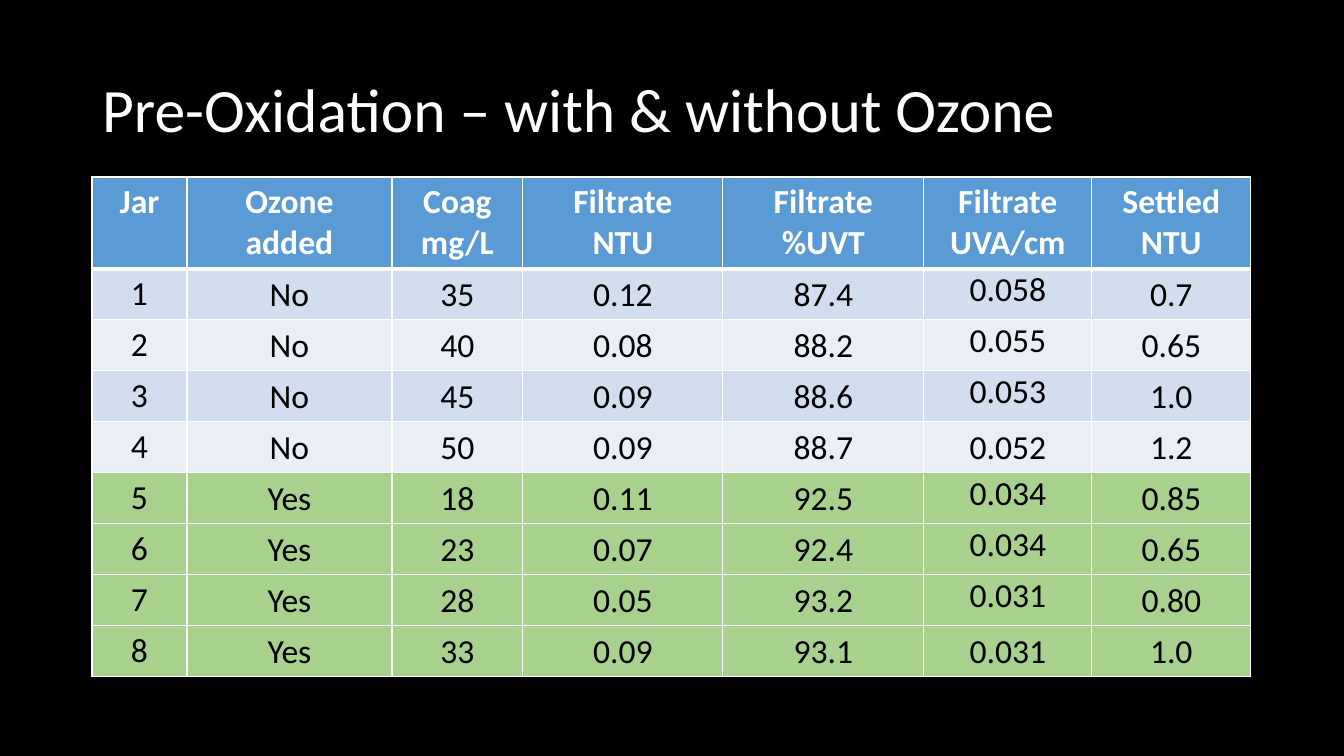
from dataclasses import dataclass

from lxml.etree import SubElement
from pptx import Presentation
from pptx.dml.color import RGBColor
from pptx.enum.text import MSO_ANCHOR, MSO_AUTO_SIZE, PP_ALIGN
from pptx.oxml.ns import qn
from pptx.util import Pt

EMU_PER_PX = 914400 / 100.8
TITLE_ONLY = 5


@dataclass(frozen=True)
class Theme:
    font: str = "Calibri"
    title_size: int = 44
    table_size: int = 24
    background: str = "000000"
    light: str = "FFFFFF"
    dark: str = "000000"
    header: str = "5B9BD5"
    bands: tuple = ("D2DEEF", "EAEFF7")
    ozone: str = "A9D18E"
    thin_line: int = 1
    header_line: int = 3


THEME = Theme()

HEADINGS = ("Jar", "Ozone\nadded", "Coag\nmg/L", "Filtrate\nNTU",
            "Filtrate\n%UVT", "Filtrate\nUVA/cm", "Settled\nNTU")
JARS = (
    ("1", "No", "35", "0.12", "87.4", "0.058", "0.7"),
    ("2", "No", "40", "0.08", "88.2", "0.055", "0.65"),
    ("3", "No", "45", "0.09", "88.6", "0.053", "1.0"),
    ("4", "No", "50", "0.09", "88.7", "0.052", "1.2"),
    ("5", "Yes", "18", "0.11", "92.5", "0.034", "0.85"),
    ("6", "Yes", "23", "0.07", "92.4", "0.034", "0.65"),
    ("7", "Yes", "28", "0.05", "93.2", "0.031", "0.80"),
    ("8", "Yes", "33", "0.09", "93.1", "0.031", "1.0"),
)
JARS_PER_GROUP = 4
JAR_COLUMN, UVA_COLUMN = 0, 5
COLUMN_WIDTHS = (95, 205, 131, 200, 201, 168, 159)
HEADER_HEIGHT, JAR_HEIGHT, TABLE_HEIGHT = 71, 42, 489
WIDE_MARGINS = (9, 5, 9, 5)
TIGHT_MARGINS = (1, 1, 1, 0)


def px(length):
    return round(length * EMU_PER_PX)


def color(value):
    return RGBColor.from_string(value)


def style_font(font, size, value, bold=False):
    font.name = THEME.font
    font.size = Pt(size)
    font.color.rgb = color(value)
    font.bold = bold


def add_title(page, text, left, top, width, height):
    title = page.shapes.title
    title.left, title.top = px(left), px(top)
    title.width, title.height = px(width), px(height)
    frame = title.text_frame
    frame.text = text
    frame.word_wrap = True
    frame.auto_size = MSO_AUTO_SIZE.NONE
    frame.vertical_anchor = MSO_ANCHOR.MIDDLE
    para = frame.paragraphs[0]
    para.alignment = PP_ALIGN.LEFT
    para.line_spacing = 0.9
    style_font(para.font, THEME.title_size, THEME.light)


def set_borders(cell, top, bottom):
    """Draw all four cell edges; top and bottom are widths in points."""
    properties = cell._tc.get_or_add_tcPr()
    widths = {"a:lnL": THEME.thin_line, "a:lnR": THEME.thin_line,
              "a:lnT": top, "a:lnB": bottom}
    for tag, width in widths.items():
        line = SubElement(properties, qn(tag), w=str(Pt(width)))
        fill = SubElement(line, qn("a:solidFill"))
        SubElement(fill, qn("a:srgbClr"), val=THEME.light)


def row_fill(row):
    if row == 0:
        return THEME.header
    if JARS[row - 1][1] == "Yes":
        return THEME.ozone
    return THEME.bands[(row - 1) % 2]


def is_top_anchored(row, column):
    """UVA values sit high, except in the last jar of each group."""
    return (row == 0 or column == JAR_COLUMN
            or column == UVA_COLUMN and row % JARS_PER_GROUP != 0)


def fill_cell(cell, text, row, column):
    is_header = row == 0
    cell.text = text
    margins = WIDE_MARGINS if is_header or column == JAR_COLUMN else TIGHT_MARGINS
    (cell.margin_left, cell.margin_top,
     cell.margin_right, cell.margin_bottom) = map(px, margins)
    cell.vertical_anchor = (MSO_ANCHOR.TOP if is_top_anchored(row, column)
                            else MSO_ANCHOR.MIDDLE)
    for para in cell.text_frame.paragraphs:
        para.alignment = PP_ALIGN.CENTER
        style_font(para.font, THEME.table_size,
                   THEME.light if is_header else THEME.dark, is_header)
    set_borders(cell,
                top=THEME.header_line if row == 1 else THEME.thin_line,
                bottom=THEME.header_line if is_header else THEME.thin_line)
    cell.fill.solid()
    cell.fill.fore_color.rgb = color(row_fill(row))


def add_jar_table(page, left, top):
    rows = (HEADINGS, *JARS)
    frame = page.shapes.add_table(
        len(rows), len(HEADINGS), px(left), px(top),
        px(sum(COLUMN_WIDTHS)), px(TABLE_HEIGHT))
    table = frame.table
    for column, width in zip(table.columns, COLUMN_WIDTHS):
        column.width = px(width)
    for row, texts in enumerate(rows):
        table.rows[row].height = px(JAR_HEIGHT if row else HEADER_HEIGHT)
        for column, text in enumerate(texts):
            fill_cell(table.cell(row, column), text, row, column)
    frame.height = px(TABLE_HEIGHT)


def main():
    deck = Presentation()
    deck.slide_width, deck.slide_height = px(1344), px(756)
    page = deck.slides.add_slide(deck.slide_layouts[TITLE_ONLY])
    page.background.fill.solid()
    page.background.fill.fore_color.rgb = color(THEME.background)
    add_title(page, "Pre-Oxidation – with & without Ozone", 92, 40, 1159, 146)
    add_jar_table(page, 92, 177)
    deck.save("out.pptx")


if __name__ == "__main__":
    main()
